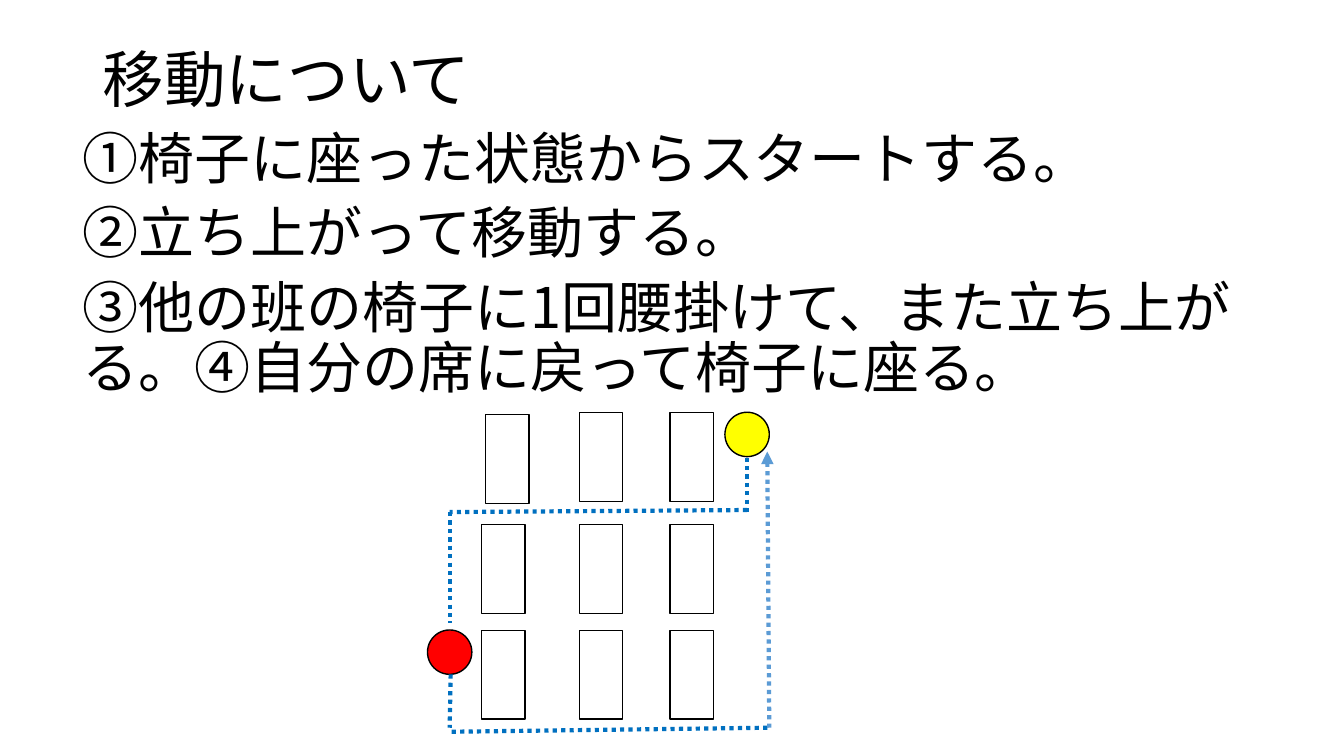
from itertools import product

from lxml import etree
from pptx import Presentation
from pptx.dml.color import RGBColor
from pptx.enum import dml, shapes, text
from pptx.oxml import ns
from pptx.util import Inches, Pt

FONT = "Noto Sans CJK JP"
BLACK = RGBColor(0x00, 0x00, 0x00)
WHITE = RGBColor(0xFF, 0xFF, 0xFF)
YELLOW = RGBColor(0xFF, 0xFF, 0x00)
RED = RGBColor(0xFF, 0x00, 0x00)
BLUE = RGBColor(0x00, 0x70, 0xC0)
LIGHT_BLUE = RGBColor(0x5B, 0x9B, 0xD5)

STEPS = [
    "①椅子に座った状態からスタートする。",
    "②立ち上がって移動する。",
    "③他の班の椅子に1回腰掛けて、また立ち上がる。④自分の席に戻って椅子に座る。",
]
DESK_COLUMNS = [4.55, 5.52, 6.42]
DESK_ROWS = [4.32, 5.43, 6.48]
FIRST_DESK = (4.59, 4.34)
ROUTE = [
    (7.41, 4.54, 7.41, 5.08),
    (7.41, 5.06, 4.46, 5.08),
    (4.46, 5.08, 4.46, 6.18),
    (4.47, 6.69, 4.46, 7.22),
    (7.61, 7.22, 4.44, 7.26),
]
RETURN_LEG = (7.63, 7.22, 7.61, 4.48)


def add_text(slide, box, lines, size, anchor, space_before=0):
    """Add a wrapped text box with one paragraph per line."""
    frame = slide.shapes.add_textbox(*map(Inches, box)).text_frame
    frame.word_wrap = True
    frame.vertical_anchor = anchor
    frame.text = "\n".join(lines)
    for paragraph in frame.paragraphs:
        paragraph.line_spacing = 0.9
        paragraph.space_before = Pt(space_before)
        for run in paragraph.runs:
            run.font.name = FONT
            run.font.size = Pt(size)
            run.font.color.rgb = BLACK
            east_asian = etree.SubElement(run.font._element, ns.qn("a:ea"))
            east_asian.set("typeface", FONT)


def add_outlined(slide, preset, box, fill, rotation=0):
    """Add a filled shape with a thin black outline."""
    item = slide.shapes.add_shape(preset, *map(Inches, box))
    item.shadow.inherit = False
    item.rotation = rotation
    item.fill.solid()
    item.fill.fore_color.rgb = fill
    item.line.color.rgb = BLACK
    item.line.width = Pt(1)


def add_desk(slide, left, top):
    """Add one desk, turned upright."""
    add_outlined(slide, shapes.MSO_SHAPE.RECTANGLE, (left, top, 0.88, 0.43), WHITE, 90)


def add_person(slide, left, top, color):
    """Add a coloured circle for a person."""
    add_outlined(slide, shapes.MSO_SHAPE.OVAL, (left, top, 0.44, 0.44), color)


def add_leg(slide, ends, color, arrow=False):
    """Add a dotted leg of the walking route."""
    leg = slide.shapes.add_connector(shapes.MSO_CONNECTOR.STRAIGHT, *map(Inches, ends))
    leg.line.color.rgb = color
    leg.line.width = Pt(3)
    leg.line.dash_style = dml.MSO_LINE.ROUND_DOT
    properties = leg._element.spPr
    if arrow:
        head = etree.SubElement(properties.find(ns.qn("a:ln")), ns.qn("a:tailEnd"))
        head.set("type", "triangle")
    etree.SubElement(properties, ns.qn("a:effectLst"))


def main():
    """Build the slide about moving between seats."""
    deck = Presentation()
    deck.slide_width, deck.slide_height = Inches(13.33), Inches(7.5)
    slide = deck.slides.add_slide(deck.slide_layouts[6])

    add_text(slide, (0.92, 0.4, 11.5, 0.84), ["移動について"], 44, text.MSO_ANCHOR.MIDDLE)
    add_text(slide, (0.72, 1.25, 11.85, 2.85), STEPS, 40, text.MSO_ANCHOR.TOP, 10)

    add_desk(slide, *FIRST_DESK)
    for top, left in list(product(DESK_ROWS, DESK_COLUMNS))[1:]:
        add_desk(slide, left, top)

    add_person(slide, 7.19, 4.09, YELLOW)
    add_person(slide, 4.24, 6.25, RED)

    for ends in ROUTE:
        add_leg(slide, ends, BLUE)
    add_leg(slide, RETURN_LEG, LIGHT_BLUE, arrow=True)

    deck.save("out.pptx")


if __name__ == "__main__":
    main()
